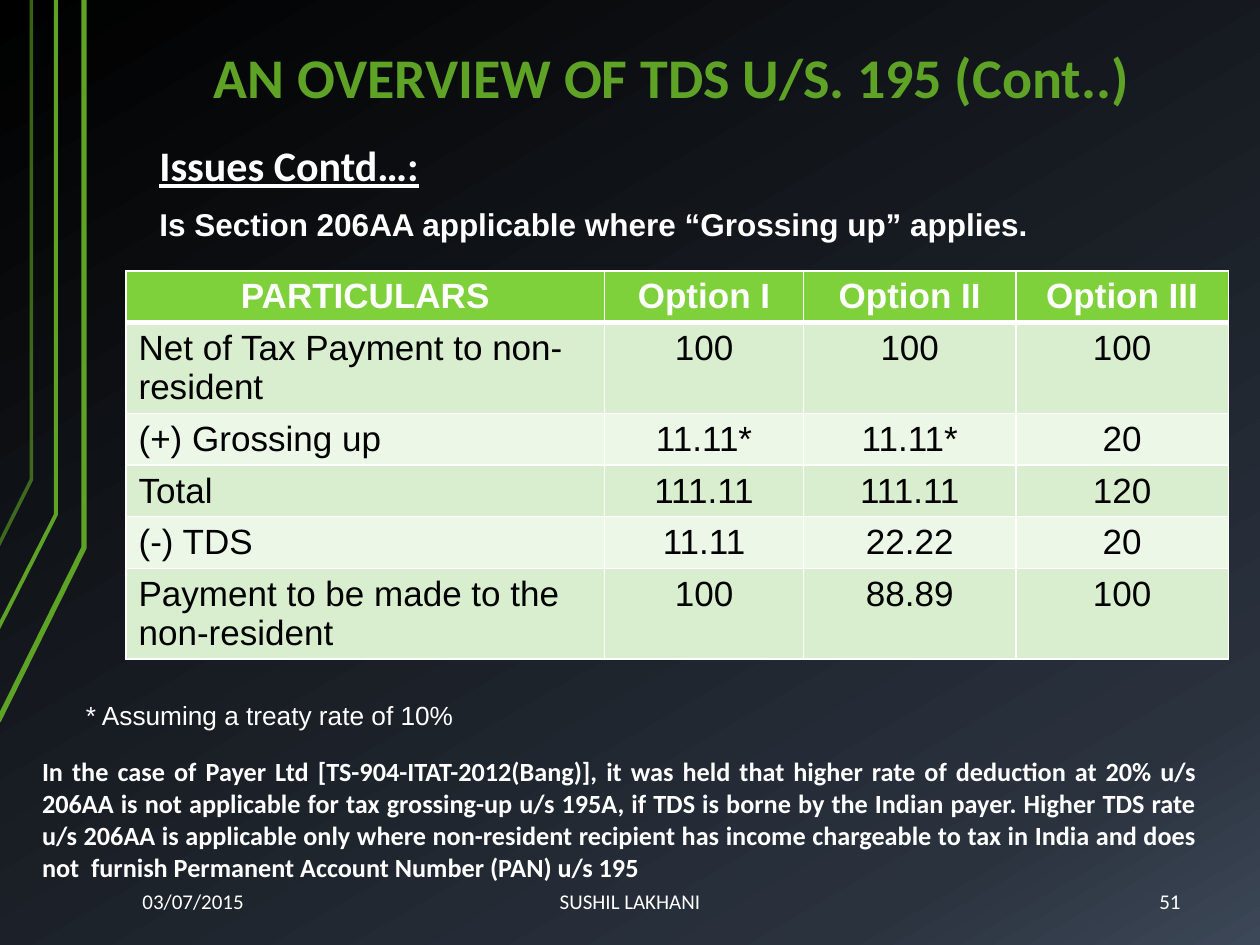
from copy import deepcopy
from dataclasses import dataclass, field

from lxml.etree import SubElement
from pptx import Presentation
from pptx.dml.color import RGBColor
from pptx.enum.text import MSO_ANCHOR as Anchor, PP_ALIGN as Align
from pptx.oxml.ns import qn
from pptx.util import Pt

COLOURS = {
    "accent": "5FA326", "header": "7FD13B", "band": "D8EECE", "light": "ECF7E8",
    "white": "FFFFFF", "black": "000000", "slate": "2A323E", "steel": "3C4757",
}
PLAIN_TABLE_STYLE = "{2D5ABB26-0587-4C30-8999-92F81FD0307C}"
FOOTER_INSETS = (9.4, 5, 9.4, 5)


@dataclass
class Label:
    text: str
    place: tuple
    font: dict
    align: Align = Align.LEFT
    anchor: Anchor = Anchor.TOP
    insets: tuple = (7.2, 3.6, 7.2, 3.6)
    wrap: bool = True
    colour: str = "white"


@dataclass
class Stripe:
    points: list
    width: float
    opacity: int = 100


@dataclass
class Grid:
    place: tuple
    columns: list
    row_height: float
    rows: list = field(default_factory=list)


def colour(name: str) -> RGBColor:
    return RGBColor.from_string(COLOURS[name])


def points(values: tuple) -> list:
    return [Pt(value) for value in values]


def font_values(size: float, name: str = "Calibri", **extra) -> dict:
    return {"size": Pt(size), "name": name, **extra}


def write(frame, text: str, font: dict, align: Align, colour_name: str) -> None:
    para = frame.paragraphs[0]
    para.alignment = align
    span = para.add_run()
    span.text = text
    for key, value in font.items():
        setattr(span.font, key, value)
    span.font.color.rgb = colour(colour_name)


def fill_box(box, label: Label) -> None:
    box.left, box.top, box.width, box.height = points(label.place)
    frame = box.text_frame
    left, top, right, bottom = points(label.insets)
    layout = {"word_wrap": label.wrap, "vertical_anchor": label.anchor,
              "margin_left": left, "margin_top": top,
              "margin_right": right, "margin_bottom": bottom}
    for key, value in layout.items():
        setattr(frame, key, value)
    write(frame, label.text, label.font, label.align, label.colour)


def draw_label(page, label: Label) -> None:
    fill_box(page.shapes.add_textbox(*points(label.place)), label)


def draw_stripe(page, stripe: Stripe) -> None:
    start, *rest = stripe.points
    builder = page.shapes.build_freeform(*start, scale=Pt(1))
    builder.add_line_segments(rest, close=False)
    shape = builder.convert_to_shape()
    shape.shadow.inherit = False
    shape.fill.background()
    shape.line.width = Pt(stripe.width)
    shape.line.color.rgb = colour("accent")
    if stripe.opacity < 100:
        tint = shape.line._get_or_add_ln().find(".//" + qn("a:srgbClr"))
        SubElement(tint, qn("a:alpha"), val=str(stripe.opacity * 1000))


def add_grid(page, grid: Grid):
    frame = page.shapes.add_table(len(grid.rows), len(grid.columns), *points(grid.place))
    table = frame.table
    table.first_row = table.horz_banding = False
    table._tbl.tblPr.find(qn("a:tableStyleId")).text = PLAIN_TABLE_STYLE
    for column, width in zip(table.columns, grid.columns):
        column.width = Pt(width)
    for row in table.rows:
        row.height = Pt(grid.row_height)
    return table


def set_borders(cell, widths: dict) -> None:
    properties = cell._tc.get_or_add_tcPr()
    for index, (side, width) in enumerate(widths.items()):
        line = properties.makeelement(qn("a:" + side), {"w": str(Pt(width))})
        solid = SubElement(line, qn("a:solidFill"))
        SubElement(solid, qn("a:srgbClr"), val=COLOURS["white"])
        properties.insert(index, line)


def draw_options(page, grid: Grid) -> None:
    table = add_grid(page, grid)
    for row, values in enumerate(grid.rows):
        header = row == 0
        fill = "header" if header else ("band" if row % 2 else "light")
        for column, text in enumerate(values):
            cell = table.cell(row, column)
            cell.fill.solid()
            cell.fill.fore_color.rgb = colour(fill)
            set_borders(cell, {"lnL": 1, "lnR": 1, "lnT": 3 if row == 1 else 1,
                               "lnB": 3 if header else 1})
            align = Align.CENTER if header or column else Align.LEFT
            write(cell.text_frame, text, font_values(20, "Arial", bold=header),
                  align, "white" if header else "black")


def draw_ruling(page, grid: Grid) -> None:
    cell = add_grid(page, grid).cell(0, 0)
    cell.fill.background()
    margins = {"margin_left": 0, "margin_top": Pt(18.7), "margin_right": 0, "margin_bottom": 0}
    for key, value in margins.items():
        setattr(cell, key, value)
    write(cell.text_frame, grid.rows[0][0], font_values(15, bold=True),
          Align.JUSTIFY, "white")


def paint_background(page) -> None:
    fill = page.background.fill
    fill.gradient()
    fill.gradient_angle = 300
    stops = page.element.find(".//" + qn("a:gsLst"))
    stops.append(deepcopy(stops[-1]))
    ramp = [(0, "black"), (0.85, "slate"), (1, "steel")]
    for stop, (position, name) in zip(fill.gradient_stops, ramp):
        stop.position = position
        stop.color.rgb = colour(name)


TITLE = Label("AN OVERVIEW OF TDS U/S. 195 (Cont..)", (77.8, 12.2, 612, 56.2),
              font_values(32, bold=True), Align.CENTER, Anchor.BOTTOM,
              FOOTER_INSETS, colour="accent")

STRIPES = [
    Stripe([(-0.7, 411.8), (47.5, 313.2), (47.5, 0)], 3),
    Stripe([(-0.7, 359.3), (31.7, 293.8), (31.7, 0)], 2.25),
    Stripe([(-0.7, 312.5), (18, 274.3), (18, 0)], 2, opacity=60),
]

LABELS = [
    Label("Issues Contd…:", (84, 76.3, 246, 36), font_values(24, bold=True, underline=True)),
    Label("Is Section 206AA applicable where “Grossing up” applies.",
          (84, 113.8, 515.5, 28.8), font_values(18, "Arial", bold=True),
          Align.JUSTIFY, wrap=False),
    Label("* Assuming a treaty rate of 10%", (42, 396, 276, 25.2), font_values(15, "Arial")),
] + [
    Label(text, (left, 500.4, width, 28.8), font_values(12), align,
          Anchor.MIDDLE, FOOTER_INSETS)
    for text, left, width, align in [
        ("03/07/2015", 72, 132, Align.LEFT),
        ("SUSHIL LAKHANI", 204, 312, Align.CENTER),
        ("51", 624, 60, Align.RIGHT),
    ]
]

OPTIONS = Grid((72, 154.8, 630, 177), [273.5, 113.7, 121.4, 121.4], 29.5, [
    ("PARTICULARS", "Option I", "Option II", "Option III"),
    ("Net of Tax Payment to non-resident", "100", "100", "100"),
    ("(+) Grossing up", "11.11*", "11.11*", "20"),
    ("Total", "111.11", "111.11", "120"),
    ("(-) TDS", "11.11", "22.22", "20"),
    ("Payment to be made to the non-resident", "100", "88.89", "100"),
])

RULING = Grid((24, 413.5, 660, 60), [660], 60, [(
    "In the case of Payer Ltd [TS-904-ITAT-2012(Bang)], it was held that higher rate of "
    "deduction at 20% u/s 206AA is not applicable for tax grossing-up u/s 195A, if TDS is "
    "borne by the Indian payer. Higher TDS rate u/s 206AA is applicable only where "
    "non-resident recipient has income chargeable to tax in India and does not  furnish "
    "Permanent Account Number (PAN) u/s 195",)])


def main() -> None:
    deck = Presentation()
    deck.slide_width, deck.slide_height = Pt(720), Pt(540)
    page = deck.slides.add_slide(deck.slide_layouts[5])
    paint_background(page)

    # Decorative lines on the left
    for stripe in STRIPES:
        draw_stripe(page, stripe)

    # Title, tables, captions and footer
    fill_box(page.shapes.title, TITLE)
    page.shapes.title.text_frame.paragraphs[0].line_spacing = 0.9
    draw_options(page, OPTIONS)
    draw_ruling(page, RULING)
    for label in LABELS:
        draw_label(page, label)

    deck.save("out.pptx")


if __name__ == "__main__":
    main()
